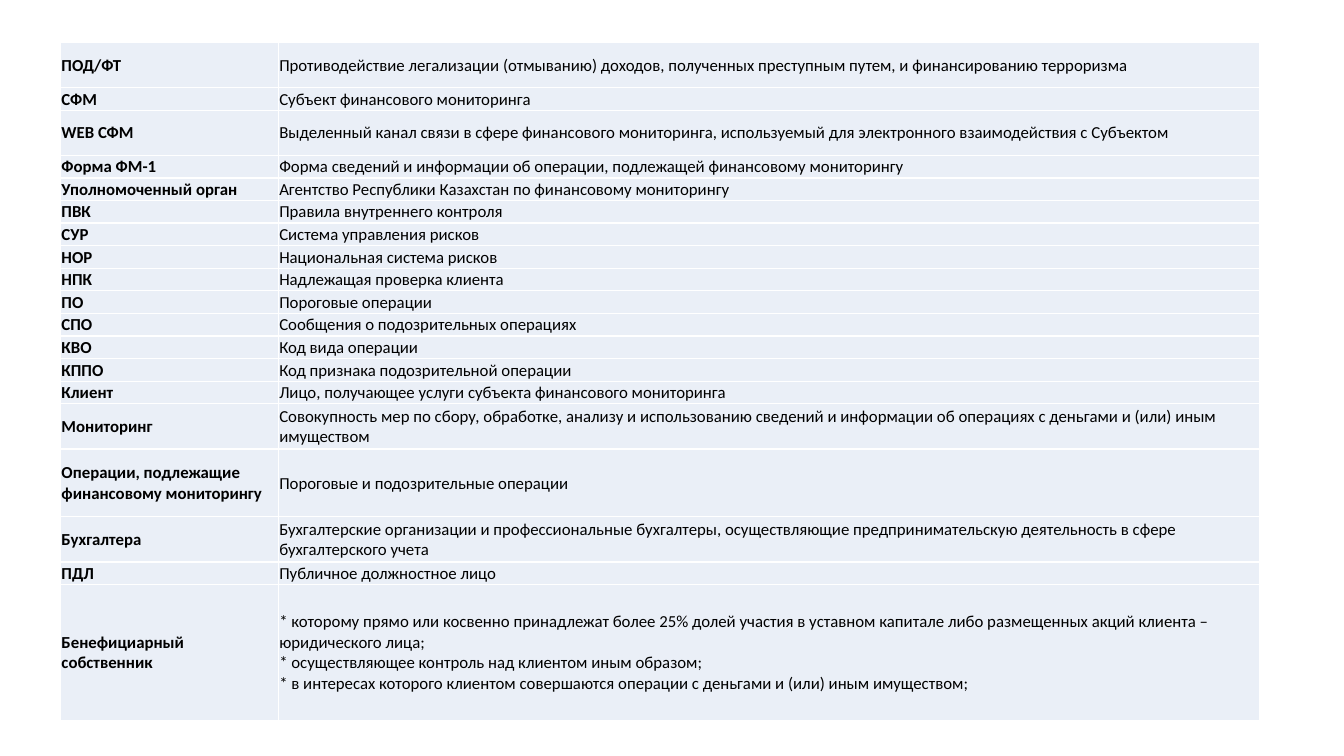
from dataclasses import dataclass

from lxml.etree import SubElement
from pptx import Presentation
from pptx.dml.color import RGBColor
from pptx.enum.text import MSO_ANCHOR
from pptx.oxml.ns import qn
from pptx.slide import Slide
from pptx.table import _Cell
from pptx.util import Inches, Pt

SLIDE_WIDTH = Inches(13.33)
SLIDE_HEIGHT = Inches(7.5)
TABLE_LEFT = round(SLIDE_WIDTH * 0.045)
TABLE_TOP = round(SLIDE_HEIGHT * 0.056)
TABLE_WIDTH = Inches(11.89)
TABLE_HEIGHT = Inches(6.73)
TERM_WIDTH = Inches(2.16)

BLACK = RGBColor(0x00, 0x00, 0x00)
WHITE = RGBColor(0xFF, 0xFF, 0xFF)
PALE_BLUE = RGBColor(0xEA, 0xEF, 0xF7)


@dataclass(frozen=True)
class Entry:
    term: str
    meaning: str
    units: int = 1


GLOSSARY = [
    Entry("ПОД/ФТ", "Противодействие легализации (отмыванию) доходов, полученных преступным путем, и финансированию терроризма", 2),
    Entry("СФМ", "Субъект финансового мониторинга"),
    Entry("WEB СФМ", "Выделенный канал связи в сфере финансового мониторинга, используемый для электронного взаимодействия с Субъектом", 2),
    Entry("Форма ФМ-1", "Форма сведений и информации об операции, подлежащей финансовому мониторингу"),
    Entry("Уполномоченный орган", "Агентство Республики Казахстан по финансовому мониторингу"),
    Entry("ПВК", "Правила внутреннего контроля"),
    Entry("СУР", "Система управления рисков"),
    Entry("НОР", "Национальная система рисков"),
    Entry("НПК", "Надлежащая проверка клиента"),
    Entry("ПО", "Пороговые операции"),
    Entry("СПО", "Сообщения о подозрительных операциях"),
    Entry("КВО", "Код вида операции"),
    Entry("КППО", "Код признака подозрительной операции"),
    Entry("Клиент", "Лицо, получающее услуги субъекта финансового мониторинга"),
    Entry("Мониторинг", "Совокупность мер по сбору, обработке, анализу и использованию сведений и информации об операциях с деньгами и (или) иным имуществом", 2),
    Entry("Операции, подлежащие финансовому мониторингу", "Пороговые и подозрительные операции", 3),
    Entry("Бухгалтера", "Бухгалтерские организации и профессиональные бухгалтеры, осуществляющие предпринимательскую деятельность в сфере бухгалтерского учета", 2),
    Entry("ПДЛ", "Публичное должностное лицо"),
    Entry(
        "Бенефициарный собственник",
        "* которому прямо или косвенно принадлежат более 25% долей участия в уставном капитале либо размещенных акций клиента – юридического лица;\n"
        "* осуществляющее контроль над клиентом иным образом;\n"
        "* в интересах которого клиентом совершаются операции с деньгами и (или) иным имуществом;",
        6,
    ),
]


def add_borders(cell: _Cell) -> None:
    properties = cell._tc.get_or_add_tcPr()
    for side in ("a:lnL", "a:lnR", "a:lnT", "a:lnB"):
        line = SubElement(properties, qn(side), w=str(Pt(1)))
        fill = SubElement(line, qn("a:solidFill"))
        SubElement(fill, qn("a:srgbClr"), val=str(WHITE))


def fill_cell(cell: _Cell, text: str, bold: bool) -> None:
    add_borders(cell)
    cell.fill.solid()
    cell.fill.fore_color.rgb = PALE_BLUE
    cell.vertical_anchor = MSO_ANCHOR.MIDDLE
    cell.margin_left = cell.margin_top = cell.margin_right = Inches(0.01)
    cell.margin_bottom = 0
    paragraph = cell.text_frame.paragraphs[0]
    paragraph.text = text
    paragraph.font.name = "Calibri"
    paragraph.font.size = Pt(12)
    paragraph.font.bold = bold
    paragraph.font.color.rgb = BLACK


def add_glossary(slide: Slide, entries: list[Entry]) -> None:
    table = slide.shapes.add_table(
        len(entries), 2, TABLE_LEFT, TABLE_TOP, TABLE_WIDTH, TABLE_HEIGHT
    ).table
    table.first_row = False
    table.horz_banding = False
    table.columns[0].width = TERM_WIDTH
    table.columns[1].width = TABLE_WIDTH - TERM_WIDTH
    unit_height = TABLE_HEIGHT / sum(entry.units for entry in entries)
    for index, entry in enumerate(entries):
        table.rows[index].height = round(entry.units * unit_height)
        fill_cell(table.cell(index, 0), entry.term, bold=True)
        fill_cell(table.cell(index, 1), entry.meaning, bold=False)


def main() -> None:
    presentation = Presentation()
    presentation.slide_width = SLIDE_WIDTH
    presentation.slide_height = SLIDE_HEIGHT
    slide = presentation.slides.add_slide(presentation.slide_layouts[6])
    add_glossary(slide, GLOSSARY)
    presentation.save("out.pptx")


if __name__ == "__main__":
    main()
